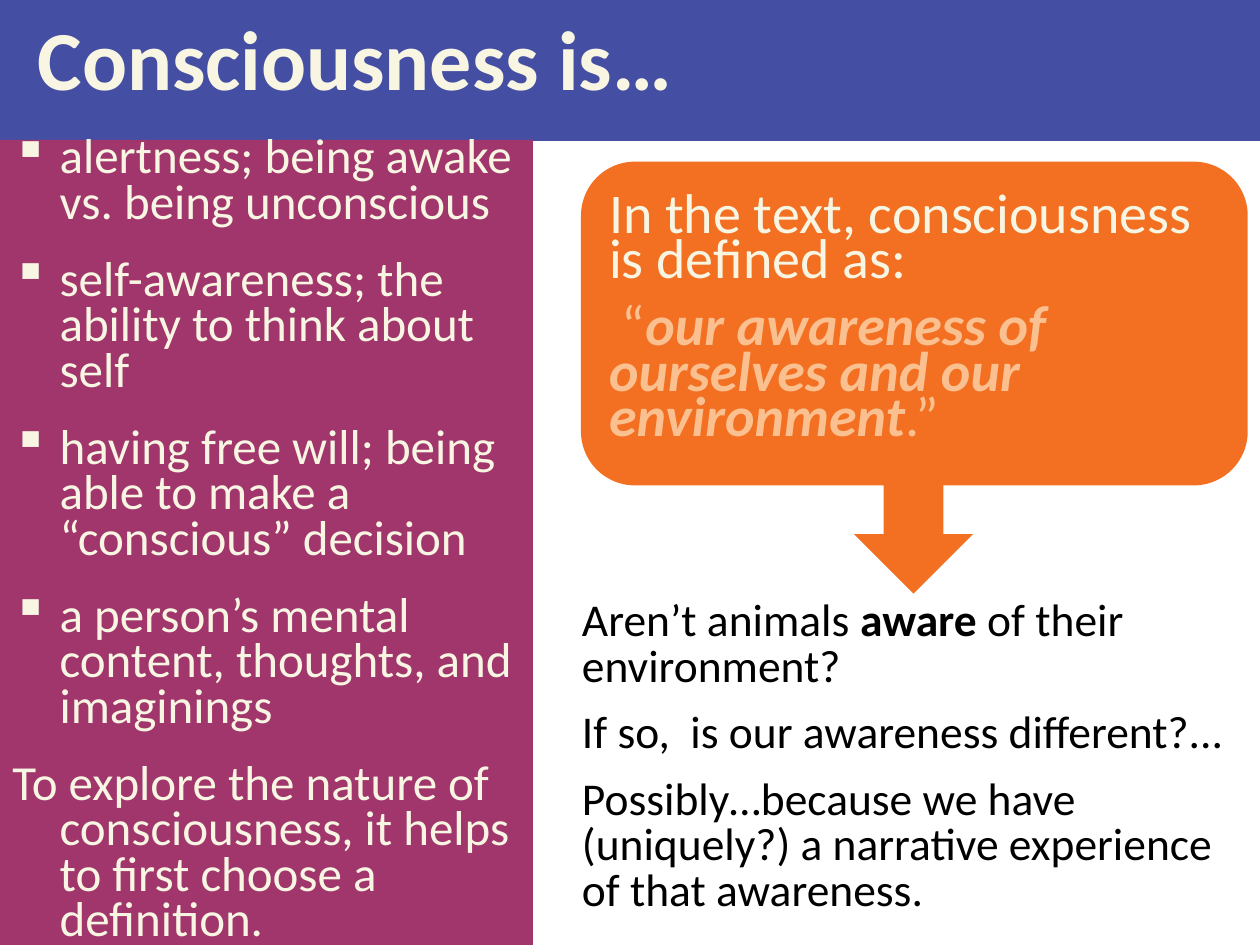
import pptx
import pptx.util
import pptx.dml.color
import pptx.enum.shapes
import pptx.enum.text
import lxml.etree
import pptx.oxml.ns

Pt = pptx.util.Pt
RGBColor = pptx.dml.color.RGBColor
SHAPE = pptx.enum.shapes.MSO_SHAPE

BLUE = RGBColor(0x44, 0x4E, 0xA2)
PLUM = RGBColor(0xA0, 0x36, 0x6C)
ORANGE = RGBColor(0xF3, 0x6F, 0x21)
PEACH = RGBColor(0xFA, 0xC0, 0x90)
CREAM = RGBColor(0xF8, 0xF6, 0xE3)
BLACK = RGBColor(0, 0, 0)


class Deck:
    font = "Calibri"
    hanging = 27

    def __init__(self, width, height):
        self.prs = pptx.Presentation()
        self.prs.slide_width, self.prs.slide_height = Pt(width), Pt(height)
        self.s = self.prs.slides.add_slide(self.prs.slide_layouts[6])

    def shape(self, kind, box, fill):
        sp = self.s.shapes.add_shape(kind, *map(Pt, box))
        sp.shadow.inherit = False
        sp.fill.solid()
        sp.fill.fore_color.rgb = fill
        sp.line.fill.background()
        return sp

    def textbox(self, box):
        return self.s.shapes.add_textbox(*map(Pt, box))

    def add_text(self, sp, paragraphs, size, color, leading=26, before=0, after=0):
        """Fill sp with paragraphs, each a list of (text, run overrides)."""
        tf = sp.text_frame
        tf.word_wrap = True
        tf.vertical_anchor = pptx.enum.text.MSO_ANCHOR.MIDDLE
        for i, runs in enumerate(paragraphs):
            p = tf.add_paragraph() if i else tf.paragraphs[0]
            p.alignment = pptx.enum.text.PP_ALIGN.LEFT
            p.line_spacing = Pt(leading)
            p.space_before, p.space_after = Pt(before), Pt(after)
            for text, style in runs:
                r = p.add_run()
                r.text = text
                r.font.name, r.font.size = self.font, Pt(size)
                r.font.color.rgb = style.get("color", color)
                r.font.bold = style.get("bold", False)
                r.font.italic = style.get("italic", False)
        return tf

    def hang(self, p, bullet=None):
        """Give p a hanging indent, with an optional bullet character."""
        pPr = p._p.get_or_add_pPr()
        pPr.set("marL", str(Pt(self.hanging)))
        pPr.set("indent", str(-Pt(self.hanging)))
        if bullet:
            bu = lxml.etree.SubElement(pPr, pptx.oxml.ns.qn("a:buChar"))
            bu.set("char", bullet)


def main():
    d = Deck(720, 540)

    d.shape(SHAPE.DOWN_ARROW, (488, 219.6, 68, 119.6), ORANGE)
    callout = d.shape(SHAPE.ROUNDED_RECTANGLE, (332, 92.4, 381, 185), ORANGE)
    quote = {"color": PEACH}
    d.add_text(callout, [
        [("In the text, consciousness is defined as:", {})],
        [(" “", quote),
         ("our awareness of ourselves and our environment",
          {"color": PEACH, "bold": True, "italic": True}),
         (".”", quote)],
    ], 32, CREAM, before=6.4, after=6)

    questions = d.textbox((325.5, 358, 384.5, 150))
    d.add_text(questions, [
        [("Aren’t animals ", {}), ("aware", {"bold": True}),
         (" of their environment?", {})],
        [("If so,  is our awareness different?...", {})],
        [("Possibly…because we have (uniquely?) a narrative experience "
          "of that awareness.", {})],
    ], 26, BLACK, after=12)

    title = d.shape(SHAPE.RECTANGLE, (0, 0, 720, 80.5), BLUE)
    tf = d.add_text(title, [[("Consciousness is…", {"bold": True})]],
                    48, CREAM, leading=42)
    tf.margin_left = Pt(21.6)

    meanings = [
        "alertness; being awake vs. being unconscious",
        "self-awareness; the ability to think about self",
        "having free will; being able to make a “conscious” decision",
        "a person’s mental content, thoughts, and imaginings",
    ]
    closing = ("To explore the nature of consciousness, it helps to first "
               "choose a definition.")
    panel = d.shape(SHAPE.RECTANGLE, (0, 80, 304.5, 460), PLUM)
    tf = d.add_text(panel, [[(text, {})] for text in meanings + [closing]],
                    28, CREAM, before=6, after=12)
    for p in tf.paragraphs[:-1]:
        d.hang(p, "▪")
    d.hang(tf.paragraphs[-1])

    d.prs.save("out.pptx")


if __name__ == "__main__":
    main()
